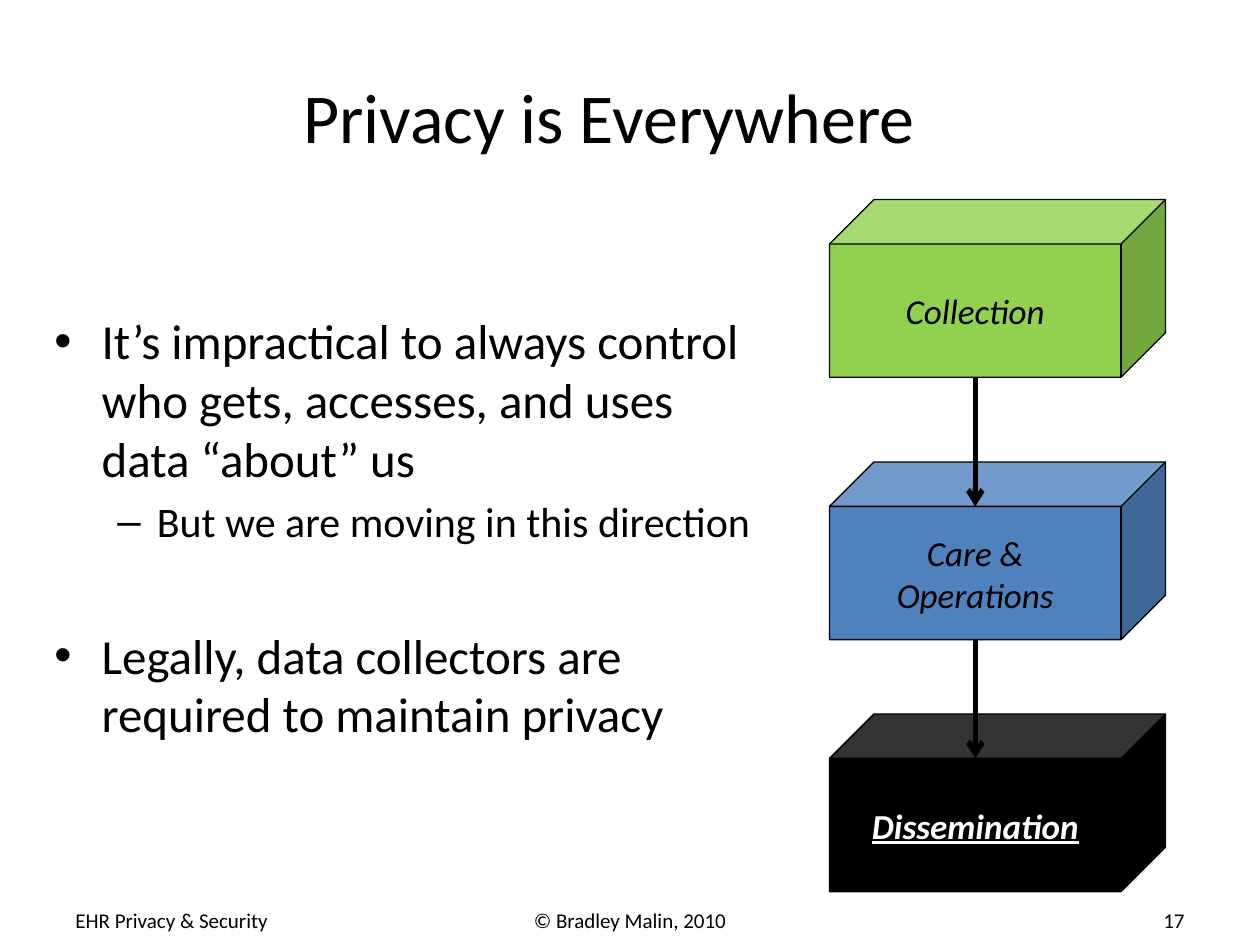
from dataclasses import dataclass

from lxml.etree import SubElement
from pptx import Presentation
from pptx.dml.color import RGBColor
from pptx.enum.shapes import MSO_CONNECTOR, MSO_SHAPE
from pptx.enum.text import MSO_ANCHOR, PP_ALIGN
from pptx.oxml.ns import qn
from pptx.util import Pt


@dataclass(frozen=True)
class Theme:
    font: str = "Calibri"
    black: RGBColor = RGBColor(0, 0, 0)
    white: RGBColor = RGBColor(255, 255, 255)
    green: RGBColor = RGBColor(0x92, 0xD0, 0x50)
    blue: RGBColor = RGBColor(0x4F, 0x81, 0xBD)
    title: Pt = Pt(40)
    body: Pt = Pt(28)
    detail: Pt = Pt(24)
    label: Pt = Pt(20)
    footer: Pt = Pt(12)


THEME = Theme()
CUBE_LEFT, CUBE_WIDTH, CUBE_HEIGHT, CUBE_DEPTH = 474, 192, 101.5, 0.25
CUBE_TOPS = (114, 264, 408)


def write(para, text, size, color=THEME.black, **formats):
    span = para.add_run()
    span.text = text
    span.font.color.rgb = color
    for name, value in {"name": THEME.font, "size": size, **formats}.items():
        setattr(span.font, name, value)


def add_box(page, left, top, width, height, anchor=MSO_ANCHOR.MIDDLE):
    box = page.shapes.add_textbox(Pt(left), Pt(top), Pt(width), Pt(height))
    box.text_frame.word_wrap = True
    box.text_frame.vertical_anchor = anchor
    return box.text_frame


def add_line_of_text(page, place, text, size, align):
    para = add_box(page, *place).paragraphs[0]
    para.alignment = align
    write(para, text, size)


def add_bullets(page, place, items):
    """Items are (text, size, bullet, left margin, hanging indent, space before)."""
    frame = add_box(page, *place, anchor=MSO_ANCHOR.TOP)
    for index, (text, size, bullet, margin, hang, before) in enumerate(items):
        para = frame.add_paragraph() if index else frame.paragraphs[0]
        properties = para._p.get_or_add_pPr()
        properties.set("marL", str(Pt(margin)))
        properties.set("indent", str(-Pt(hang)))
        SubElement(properties, qn("a:buFont"), typeface="Arial")
        SubElement(properties, qn("a:buChar"), char=bullet)
        para.space_before = Pt(before)
        write(para, text, size)


def add_cube(page, top, lines, fill, color=THEME.black, **formats):
    cube = page.shapes.add_shape(
        MSO_SHAPE.CUBE, Pt(CUBE_LEFT), Pt(top), Pt(CUBE_WIDTH), Pt(CUBE_HEIGHT))
    cube.adjustments[0] = CUBE_DEPTH
    cube.shadow.inherit = False
    cube.fill.solid()
    cube.fill.fore_color.rgb = fill
    cube.line.color.rgb = THEME.black
    cube.line.width = Pt(0.75)
    frame = cube.text_frame
    frame.vertical_anchor = MSO_ANCHOR.MIDDLE
    for index, text in enumerate(lines):
        para = frame.add_paragraph() if index else frame.paragraphs[0]
        para.alignment = PP_ALIGN.CENTER
        write(para, text, THEME.label, color, italic=True, **formats)


def add_arrow(page, x, start, end):
    arrow = page.shapes.add_connector(
        MSO_CONNECTOR.STRAIGHT, Pt(x), Pt(start), Pt(x), Pt(end))
    arrow.line.color.rgb = THEME.black
    arrow.line.width = Pt(3)
    SubElement(arrow.line._get_or_add_ln(), qn("a:tailEnd"), type="arrow")
    SubElement(arrow._element.spPr, qn("a:effectLst"))


def main():
    deck = Presentation()
    deck.slide_width, deck.slide_height = Pt(720), Pt(540)
    page = deck.slides.add_slide(deck.slide_layouts[6])

    add_line_of_text(page, (24, 12, 648, 108), "Privacy is Everywhere",
                     THEME.title, PP_ALIGN.CENTER)
    add_bullets(page, (24, 174, 420, 306), [
        ("It’s impractical to always control who gets, accesses, and uses "
         "data “about” us", THEME.body, "•", 27, 27, 0),
        ("But we are moving in this direction", THEME.detail, "–", 58.5, 22.5, 5),
        ("Legally, data collectors are required to maintain privacy",
         THEME.body, "•", 27, 27, 45),
    ])

    collection, care, dissemination = CUBE_TOPS
    add_cube(page, collection, ["Collection"], THEME.green)
    add_cube(page, care, ["Care &", "Operations"], THEME.blue)
    add_cube(page, dissemination, ["Dissemination"], THEME.black, THEME.white,
             bold=True, underline=True)

    depth = CUBE_HEIGHT * CUBE_DEPTH
    front_center = CUBE_LEFT + (CUBE_WIDTH - depth) / 2
    for upper, lower in zip(CUBE_TOPS, CUBE_TOPS[1:]):
        add_arrow(page, front_center, upper + CUBE_HEIGHT, lower + depth)

    for left, width, text, align in (
        (36, 168, "EHR Privacy & Security", PP_ALIGN.LEFT),
        (246, 228, "© Bradley Malin, 2010", PP_ALIGN.CENTER),
        (516, 168, "17", PP_ALIGN.RIGHT),
    ):
        add_line_of_text(page, (left, 511.5, width, 28.5), text, THEME.footer, align)

    deck.save("out.pptx")


if __name__ == "__main__":
    main()
